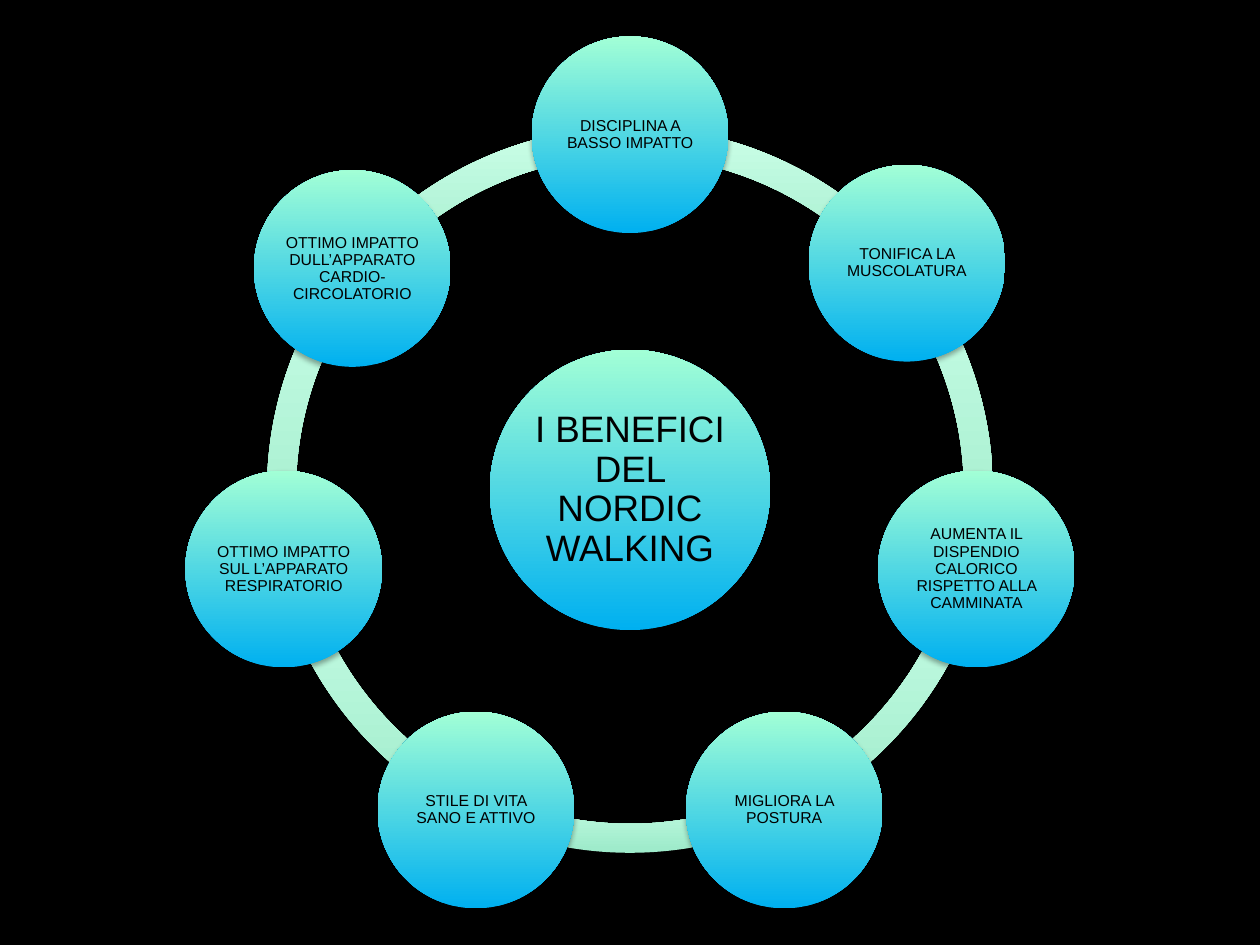
from math import cos, radians, sin

from lxml import etree
from pptx import Presentation
from pptx.dml.color import RGBColor
from pptx.enum import shapes as sh, text as tx
from pptx.oxml.ns import qn
from pptx.util import Pt

HUB = "I BENEFICI DEL NORDIC WALKING"
NODES = [
    ("DISCIPLINA A BASSO IMPATTO", 2, (0, 0)),
    ("TONIFICA LA MUSCOLATURA", 2, (-0.5, -3)),
    ("AUMENTA IL DISPENDIO CALORICO RISPETTO ALLA CAMMINATA", 5, (0, 0)),
    ("MIGLIORA LA POSTURA", 2, (0, 0)),
    ("STILE DI VITA SANO E ATTIVO", 2, (0, 0)),
    ("OTTIMO IMPATTO SUL L’APPARATO RESPIRATORIO", 3, (0, 0)),
    ("OTTIMO IMPATTO DULL’APPARATO CARDIO-CIRCOLATORIO", 4, (0, 0)),
]

BLACK = RGBColor(0, 0, 0)
DISC = RGBColor(0x00, 0xB0, 0xF0), RGBColor(0xA2, 0xFF, 0xD6)
RING = RGBColor(0x9F, 0xEB, 0xCB), RGBColor(0xCB, 0xFF, 0xE7)

MID_X, MID_Y = 360, 280
OUTER, INNER, ORBIT = 207.4, 190.8, 203
HUB_FMT = {"size": 160.2, "wide": 113.6, "font": 21, "inset": 2, "before": 8}
NODE_FMT = {"size": 112.4, "wide": 79.4, "font": 9, "inset": 0.8, "before": 3}
HUB_HIGH, LINE_HIGH, PAD = 92.2, 9, 2.8
STEP = 360 / len(NODES)


def spot(radius, angle):
    turn = radians(angle)
    return MID_X + radius * sin(turn), MID_Y - radius * cos(turn)


def assign(item, values):
    for name, value in values.items():
        setattr(item, name, value)


def frame_at(x, y, wide, high):
    return Pt(x - wide / 2), Pt(y - high / 2), Pt(wide), Pt(high)


def paint(shape, colors):
    shape.fill.gradient()
    shape.fill.gradient_angle = 90
    for stop, color, place in zip(shape.fill.gradient_stops, colors, (0, 1)):
        stop.color.rgb = color
        stop.position = place
    shape.line.fill.background()
    shape.shadow.inherit = False
    effects = shape._element.spPr.find(qn("a:effectLst"))
    shade = etree.SubElement(effects, qn("a:outerShdw"), blurRad=str(Pt(3)),
                             dist=str(Pt(1.8)), dir="5400000", rotWithShape="0")
    color = etree.SubElement(shade, qn("a:srgbClr"), val=str(BLACK))
    etree.SubElement(color, qn("a:alpha"), val="35000")


def bend(start, lines):
    points = [start] + [line[0] for line in lines]
    xs, ys = ([int(p.get(axis)) for p in points] for axis in "xy")
    curve = etree.Element(qn("a:cubicBezTo"))
    for rule in ((-5, 18, -9, 2), (2, -9, 18, -5), (0, 0, 0, 6)):
        x, y = (round(sum(a * b for a, b in zip(rule, vals)) / 6)
                for vals in (xs, ys))
        etree.SubElement(curve, qn("a:pt"), x=str(x), y=str(y))
    lines[0].addprevious(curve)
    for line in lines:
        line.getparent().remove(line)


def add_arc(slide, start):
    angles = [start + STEP * i / 3 for i in range(4)]
    points = [spot(OUTER, a) for a in angles]
    points += [spot(INNER, a) for a in reversed(angles)]
    points = [(Pt(x), Pt(y)) for x, y in points]
    form = slide.shapes.build_freeform(*points[0])
    form.add_line_segments(points[1:], close=True)
    shape = form.convert_to_shape()
    outline = next(shape._element.iter(qn("a:moveTo"))).getparent()
    lines = outline.findall(qn("a:lnTo"))
    bend(lines[3][0], lines[4:7])
    bend(outline[0][0], lines[:3])
    paint(shape, RING)


def add_disc(slide, label, x, y, high, fmt):
    size = fmt["size"]
    disc = slide.shapes.add_shape(sh.MSO_SHAPE.OVAL, *frame_at(x, y, size, size))
    paint(disc, DISC)
    box = slide.shapes.add_textbox(*frame_at(x, y, fmt["wide"], high))
    frame = box.text_frame
    sides = ("left", "top", "right", "bottom")
    assign(frame, {f"margin_{side}": Pt(fmt["inset"]) for side in sides})
    assign(frame, {"word_wrap": True, "vertical_anchor": tx.MSO_ANCHOR.MIDDLE,
                   "auto_size": tx.MSO_AUTO_SIZE.SHAPE_TO_FIT_TEXT})
    para = frame.paragraphs[0]
    assign(para, {"alignment": tx.PP_ALIGN.CENTER, "line_spacing": 0.9,
                  "space_before": Pt(fmt["before"])})
    run = para.add_run()
    run.text = label
    assign(run.font, {"name": "Arial", "size": Pt(fmt["font"])})
    run.font.color.rgb = BLACK


def main():
    deck = Presentation()
    assign(deck, {"slide_width": Pt(720), "slide_height": Pt(540)})
    slide = deck.slides.add_slide(deck.slide_layouts[6])
    slide.background.fill.solid()
    slide.background.fill.fore_color.rgb = BLACK
    for i in reversed(range(len(NODES))):
        add_arc(slide, i * STEP)
    add_disc(slide, HUB, MID_X, MID_Y, HUB_HIGH, HUB_FMT)
    for i, (label, rows, (dx, dy)) in enumerate(NODES):
        x, y = spot(ORBIT, i * STEP)
        add_disc(slide, label, x + dx, y + dy, rows * LINE_HIGH + PAD, NODE_FMT)
    deck.save("out.pptx")


if __name__ == "__main__":
    main()
